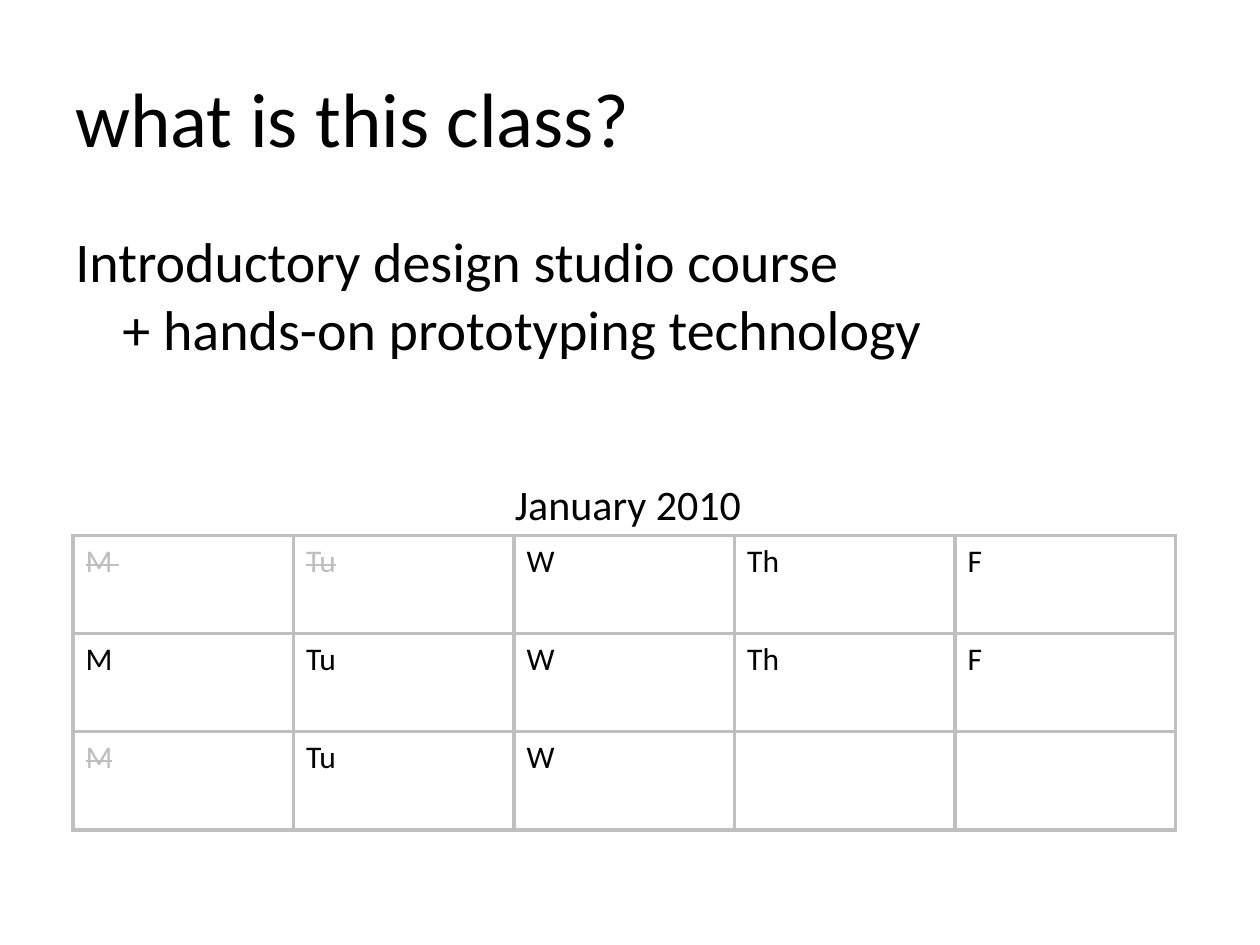
import pptx
import pptx.dml.color
import pptx.enum.text
import pptx.oxml
import pptx.oxml.ns
import pptx.util

Cm, Pt = pptx.util.Cm, pptx.util.Pt
ANCHOR = pptx.enum.text.MSO_ANCHOR
ALIGN = pptx.enum.text.PP_ALIGN

COLOURS = {"text": "000000", "muted": "BFBFBF", "border": "BFBFBF"}

# Each week as (day, struck out); the last two days stay empty
WEEKS = [
    [("M ", True), ("Tu", True), ("W", False), ("Th", False), ("F", False)],
    [("M", False), ("Tu", False), ("W", False), ("Th", False), ("F", False)],
    [("M", True), ("Tu", False), ("W", False), ("", False), ("", False)],
]


class ClassSlide:
    """Holds the style and the current slide."""

    font_name = "Calibri"
    border_width = Pt(2.25)

    def __init__(self, slide):
        self.slide = slide

    def wording(self, paragraph, words, size, colour="text", struck=False):
        paragraph.text = words
        for run in paragraph.runs:
            font_format = {"name": self.font_name, "size": Pt(size)}
            for attribute, value in font_format.items():
                setattr(run.font, attribute, value)
            run.font.color.rgb = pptx.dml.color.RGBColor.from_string(COLOURS[colour])
            if struck:
                run._r.get_or_add_rPr().set("strike", "sngStrike")

    def text(self, words, left, top, width, height, size,
             frame_format=None, paragraph_format=None):
        box = self.slide.shapes.add_textbox(Cm(left), Cm(top), Cm(width), Cm(height))
        frame = box.text_frame
        for attribute, value in {"word_wrap": True, **(frame_format or {})}.items():
            setattr(frame, attribute, value)
        paragraph = frame.paragraphs[0]
        self.wording(paragraph, words, size)
        for attribute, value in (paragraph_format or {}).items():
            setattr(paragraph, attribute, value)
        return paragraph

    def hanging_indent(self, paragraph, indent):
        properties = paragraph._p.get_or_add_pPr()
        properties.set("marL", str(Cm(indent)))
        properties.set("indent", str(-Cm(indent)))

    def border(self, cell):
        properties = cell._tc.get_or_add_tcPr()
        for position, side in enumerate(("lnL", "lnR", "lnT", "lnB")):
            properties.insert(position, pptx.oxml.parse_xml(
                f'<a:{side} {pptx.oxml.ns.nsdecls("a")} w="{self.border_width}">'
                f'<a:solidFill><a:srgbClr val="{COLOURS["border"]}"/></a:solidFill>'
                f'</a:{side}>'))

    def calendar(self, weeks, left, top, width, height, size):
        grid = self.slide.shapes.add_table(
            len(weeks), len(weeks[0]), Cm(left), Cm(top), Cm(width), Cm(height)).table
        for flag in ("first_row", "horz_banding"):
            setattr(grid, flag, False)
        for row, week in enumerate(weeks):
            for column, (day, struck) in enumerate(week):
                cell = grid.cell(row, column)
                cell.fill.background()
                self.border(cell)
                self.wording(cell.text_frame.paragraphs[0], day, size,
                             "muted" if struck else "text", struck)


def main():
    deck = pptx.Presentation()
    deck.slide_width, deck.slide_height = Cm(25.4), Cm(19.05)
    page = ClassSlide(deck.slides.add_slide(deck.slide_layouts[6]))

    # Title and course description
    page.text("what is this class?", 1.27, 0.76, 22.86, 3.18, 44,
              {"vertical_anchor": ANCHOR.MIDDLE})
    description = page.text(
        "Introductory design studio course \v+ hands-on prototyping technology",
        1.27, 4.45, 22.86, 3.18, 32, paragraph_format={"space_before": Pt(6.4)})
    page.hanging_indent(description, 0.95)

    # Calendar with its month
    page.calendar(WEEKS, 1.47, 10.8, 22.23, 5.93, 18)
    page.text("January 2010", 10.13, 9.53, 5.41, 1.27, 24,
              {"word_wrap": False,
               "auto_size": pptx.enum.text.MSO_AUTO_SIZE.SHAPE_TO_FIT_TEXT},
              {"alignment": ALIGN.LEFT})

    deck.save("out.pptx")


if __name__ == "__main__":
    main()
